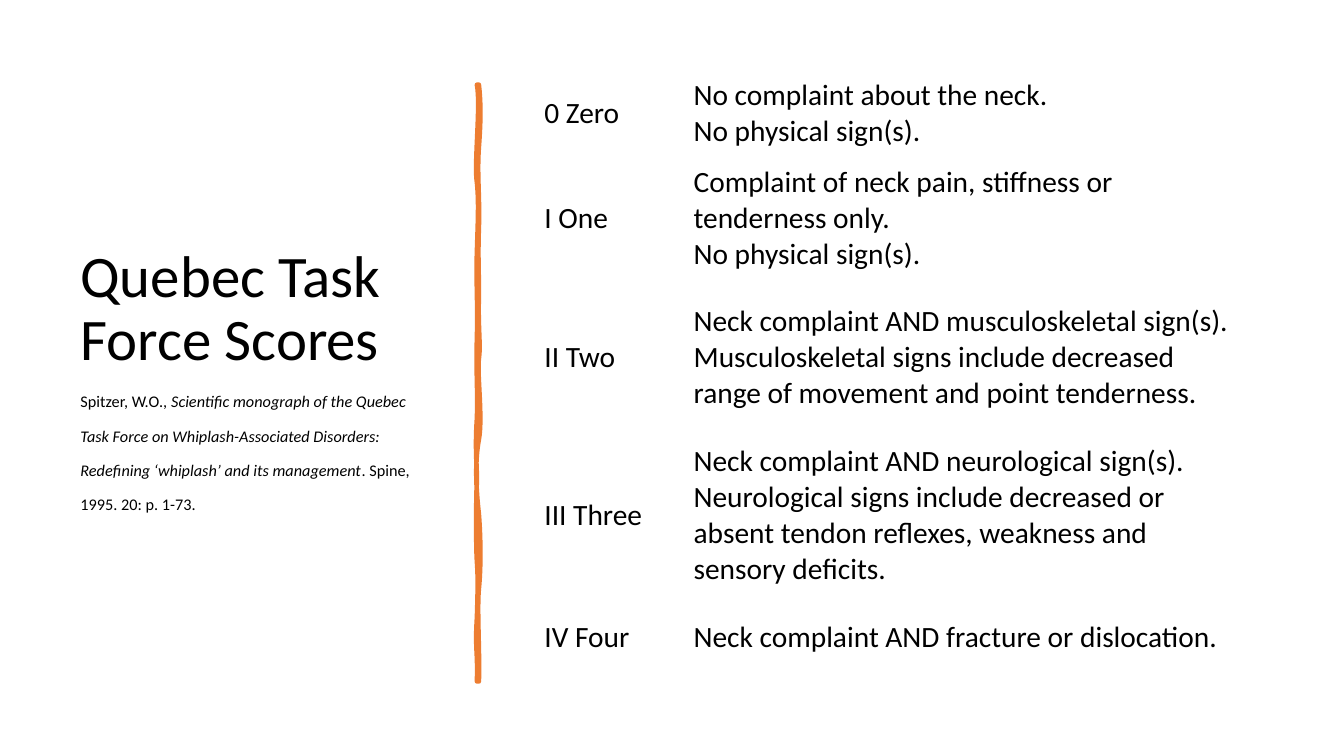
from lxml import etree
from pptx import Presentation
from pptx.dml.color import RGBColor
from pptx.enum.text import MSO_ANCHOR, PP_ALIGN
from pptx.oxml.ns import qn
from pptx.util import Inches, Pt

MIDDLE = MSO_ANCHOR.MIDDLE
LEFT = PP_ALIGN.LEFT
BLACK = RGBColor(0x00, 0x00, 0x00)
ORANGE = RGBColor(0xED, 0x7D, 0x31)
FONT = "Calibri"

# Content
TITLE = "Quebec Task Force Scores "
CITATION = [  # text, italic
    ("Spitzer, W.O., ", False),
    ("Scientific monograph of the Quebec Task Force on Whiplash-Associated "
     "Disorders: Redefining ‘whiplash’ and its management", True),
    (". Spine, 1995. 20: p. 1-73.", False),
]
SCORES = [  # row height, grade, lines of the definition
    (0.86, "0 Zero", ["No complaint about the neck.", "No physical sign(s)."]),
    (1.21, "I One", ["Complaint of neck pain, stiffness or tenderness only.",
                     "No physical sign(s)."]),
    (1.56, "II Two", ["Neck complaint AND musculoskeletal sign(s).",
                      "Musculoskeletal signs include decreased range of "
                      "movement and point tenderness."]),
    (1.56, "III Three", ["Neck complaint AND neurological sign(s).",
                         "Neurological signs include decreased or absent tendon "
                         "reflexes, weakness and sensory deficits."]),
    (0.86, "IV Four", ["Neck complaint AND fracture or dislocation."]),
]
COLUMN_WIDTHS = [1.48, 5.67]

# Hand-drawn divider: each curve is two handles and an end
DIVIDER_LEFT, DIVIDER_TOP, DIVIDER_RIGHT, DIVIDER_BOTTOM = 4.73, 0.84, 4.75, 6.76
STROKE_CURVES = [
    ((4.77, 1.02), (4.77, 1.19), (4.75, 1.46)),
    ((4.73, 1.73), (4.76, 1.95), (4.75, 2.26)),
    ((4.74, 2.57), (4.75, 2.62), (4.75, 2.94)),
    ((4.74, 3.25), (4.77, 3.42), (4.75, 3.56)),
    ((4.73, 3.70), (4.79, 4.14), (4.75, 4.36)),
    ((4.71, 4.57), (4.72, 4.84), (4.75, 5.10)),
    ((4.77, 5.36), (4.77, 5.64), (4.75, 5.84)),
    ((4.73, 6.03), (4.76, 6.50), (4.75, 6.76)),
    ((4.74, 6.76), (4.73, 6.76), (4.73, 6.76)),
    ((4.74, 6.46), (4.71, 6.44), (4.73, 6.13)),
    ((4.74, 5.83), (4.74, 5.70), (4.73, 5.57)),
    ((4.72, 5.44), (4.72, 4.95), (4.73, 4.77)),
    ((4.73, 4.59), (4.71, 4.45), (4.73, 4.15)),
    ((4.74, 3.86), (4.72, 3.73), (4.73, 3.35)),
    ((4.74, 2.98), (4.72, 2.81), (4.73, 2.50)),
    ((4.74, 2.18), (4.75, 2.00), (4.73, 1.81)),
    ((4.70, 1.63), (4.77, 1.04), (4.73, 0.84)),
    ((4.74, 0.84), (4.74, 0.84), (4.75, 0.84)),
]
FILL_CURVES = [
    ((4.75, 1.15), (4.72, 1.25), (4.75, 1.52)),
    ((4.77, 1.79), (4.74, 1.97), (4.75, 2.08)),
    ((4.76, 2.20), (4.74, 2.55), (4.75, 2.94)),
    ((4.76, 3.33), (4.73, 3.43), (4.75, 3.62)),
    ((4.77, 3.81), (4.77, 3.97), (4.75, 4.30)),
    ((4.72, 4.63), (4.75, 4.74), (4.75, 5.16)),
    ((4.75, 5.57), (4.74, 5.53), (4.75, 5.78)),
    ((4.76, 6.03), (4.74, 6.47), (4.75, 6.76)),
    ((4.74, 6.75), (4.73, 6.75), (4.73, 6.76)),
    ((4.70, 6.49), (4.74, 6.32), (4.73, 6.13)),
    ((4.72, 5.95), (4.75, 5.69), (4.73, 5.39)),
    ((4.71, 5.10), (4.76, 5.00), (4.73, 4.71)),
    ((4.70, 4.42), (4.77, 4.20), (4.73, 3.86)),
    ((4.69, 3.51), (4.74, 3.25), (4.73, 3.00)),
    ((4.71, 2.75), (4.71, 2.59), (4.73, 2.38)),
    ((4.74, 2.16), (4.74, 1.85), (4.73, 1.64)),
    ((4.71, 1.43), (4.75, 1.21), (4.73, 0.84)),
    ((4.74, 0.84), (4.74, 0.84), (4.75, 0.84)),
]
OUTLINES = [({"fill": "none"}, STROKE_CURVES), ({"stroke": "0"}, FILL_CURVES)]


def add_span(para, text, size, italic=False):
    span = para.add_run()
    span.text = text
    span.font.name = FONT
    span.font.size = Pt(size)
    span.font.italic = italic
    span.font.color.rgb = BLACK
    return span


def add_title(page):
    box = page.shapes.add_textbox(Inches(0.7), Inches(0.7), Inches(3.74), Inches(6.11))
    frame = box.text_frame
    frame.word_wrap = True
    frame.vertical_anchor = MIDDLE
    para = frame.paragraphs[0]
    para.alignment = LEFT
    para.line_spacing = 0.9
    add_span(para, TITLE, 42)
    para.add_line_break()
    for text, italic in CITATION:
        span = add_span(para, text, 20, italic)
        span.font._element.set("baseline", "-25000")  # subscript


def add_step(outline, tag, points):
    """Append one drawing step, with points relative to the divider's corner."""
    step = etree.SubElement(outline, qn(tag))
    for x, y in points:
        etree.SubElement(step, qn("a:pt"), x=str(Inches(x - DIVIDER_LEFT)),
                         y=str(Inches(y - DIVIDER_TOP)))


def add_divider(page):
    # The frame is a thin box, whose straight outline gives way to curves
    builder = page.shapes.build_freeform(
        Inches(DIVIDER_RIGHT), Inches(DIVIDER_TOP), scale=1.0)
    builder.add_line_segments([
        (Inches(DIVIDER_RIGHT), Inches(DIVIDER_BOTTOM)),
        (Inches(DIVIDER_LEFT), Inches(DIVIDER_BOTTOM)),
        (Inches(DIVIDER_LEFT), Inches(DIVIDER_TOP))])
    divider = builder.convert_to_shape()
    outlines = divider._element.xpath(".//a:pathLst")[0]
    outlines.remove(outlines[0])
    for options, curves in OUTLINES:
        outline = etree.SubElement(outlines, qn("a:path"), w=str(divider.width),
                                   h=str(divider.height), **options)
        add_step(outline, "a:moveTo", [(DIVIDER_RIGHT, DIVIDER_TOP)])
        for curve in curves:
            add_step(outline, "a:cubicBezTo", curve)
        add_step(outline, "a:close", [])
    divider.shadow.inherit = False
    divider.fill.solid()
    divider.fill.fore_color.rgb = ORANGE
    divider.line.color.rgb = ORANGE
    divider.line.width = Pt(3.25)


def fill_cell(cell, lines):
    cell.fill.background()
    cell.vertical_anchor = MIDDLE
    cell.margin_left = cell.margin_right = Inches(0.12)
    cell.margin_top = cell.margin_bottom = Inches(0.06)
    para = cell.text_frame.paragraphs[0]
    for index, line in enumerate(lines):
        if index:
            para.add_line_break()
        add_span(para, line, 21)


def add_scores(page):
    height = sum(row[0] for row in SCORES)
    table = page.shapes.add_table(
        len(SCORES), len(COLUMN_WIDTHS), Inches(5.28), Inches(0.7),
        Inches(sum(COLUMN_WIDTHS)), Inches(height)).table
    table.first_row = False
    table.horz_banding = False
    for column, width in zip(table.columns, COLUMN_WIDTHS):
        column.width = Inches(width)
    for index, (row_height, grade, definition) in enumerate(SCORES):
        table.rows[index].height = Inches(row_height)
        fill_cell(table.cell(index, 0), [grade])
        fill_cell(table.cell(index, 1), definition)


def main():
    deck = Presentation()
    deck.slide_width = Inches(13.33)
    deck.slide_height = Inches(7.5)
    page = deck.slides.add_slide(deck.slide_layouts[6])
    add_title(page)
    add_divider(page)
    add_scores(page)
    deck.save("out.pptx")


if __name__ == "__main__":
    main()
